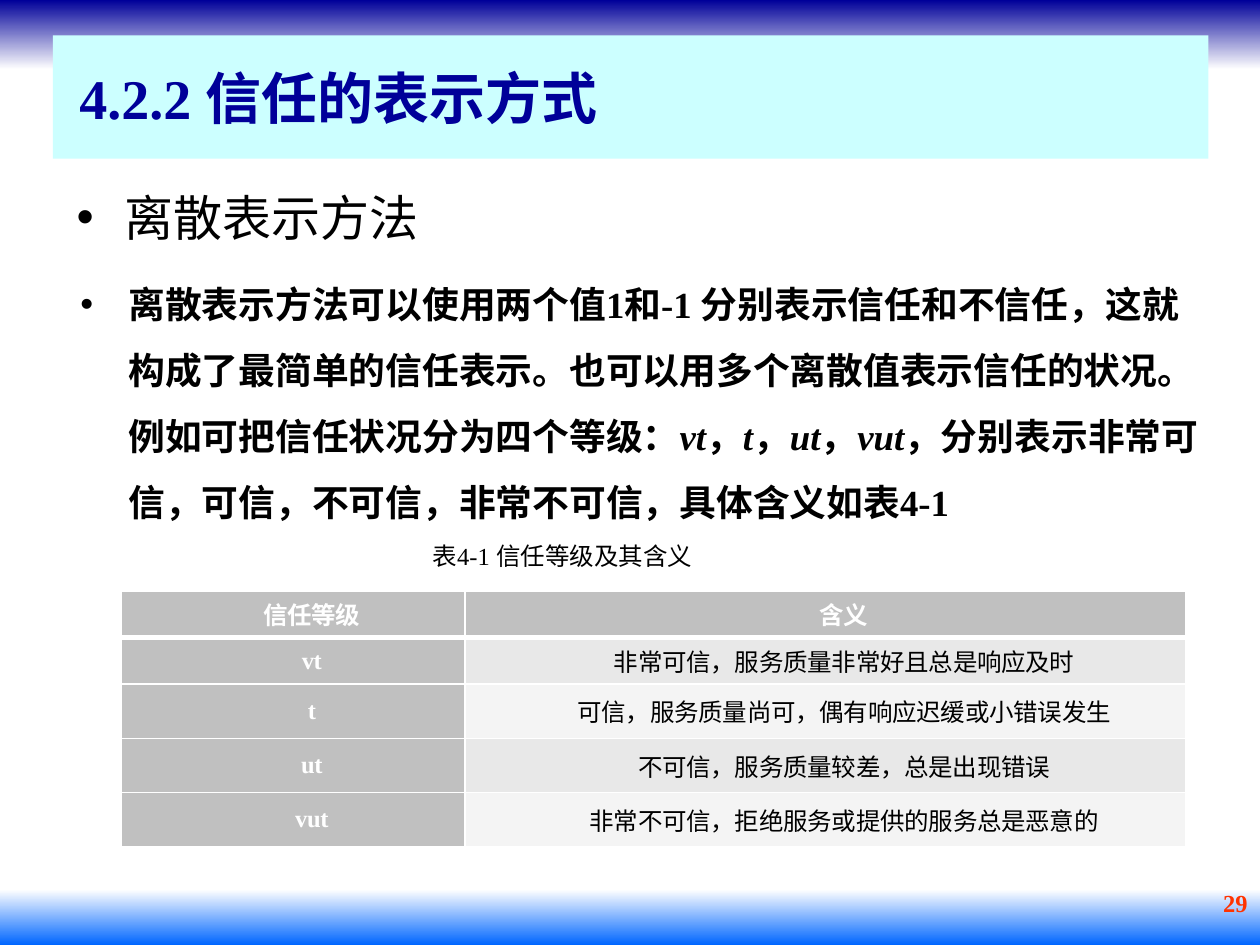
from lxml import etree
from pptx import Presentation
from pptx import util as u
from pptx.dml.color import RGBColor
from pptx.enum import shapes, text
from pptx.oxml import ns

COLORS = {
    "navy": "000099", "blue": "0066FF", "white": "FFFFFF", "black": "000000",
    "cyan": "CCFFFF", "red": "FF3300", "gray": "C0C0C0",
    "odd": "E8E8E8", "even": "F4F4F4",
}
SERIF = "Times New Roman"
LEFT, CENTER, RIGHT = text.PP_ALIGN.LEFT, text.PP_ALIGN.CENTER, text.PP_ALIGN.RIGHT
TOP, MIDDLE = text.MSO_ANCHOR.TOP, text.MSO_ANCHOR.MIDDLE

BANDS = [
    ((0, 0, 10, 0.55), ("navy", "white")),
    ((0, 7.06, 10, 0.44), ("white", "blue")),
]
TITLE = "4.2.2 信任的表示方式"
TITLE_BOX = (0.42, 0.28, 9.17, 0.98)
EXPLANATION = [
    ("离散表示方法可以使用两个值1和-1 分别表示信任和不信任，这就构成了最简单的信任表示。"
     "也可以用多个离散值表示信任的状况。例如可把信任状况分为四个等级：", False),
    ("vt", True), ("，", False), ("t", True), ("，", False),
    ("ut", True), ("，", False), ("vut", True),
    ("，分别表示非常可信，可信，不可信，非常不可信，具体含义如表4-1", False),
]
TEXT_BOXES = [
    {"box": (0.51, 1.39, 8.74, 0.59), "runs": [("离散表示方法", False)],
     "font": {"size": u.Pt(28), "name": "Montserrat", "bold": False}, "color": "black",
     "paragraph": {"line_spacing": 1.1}, "indent": (0.38, -0.38), "bullet": "•"},
    {"box": (7.05, 7, 2.95, 0.5), "runs": [("29", False)],
     "font": {"size": u.Pt(14), "name": SERIF, "bold": True}, "color": "red",
     "paragraph": {"alignment": RIGHT}},
    {"box": (0.42, 2.01, 9.29, 2.22), "runs": EXPLANATION,
     "font": {"size": u.Pt(21), "name": SERIF, "bold": True}, "color": "black",
     "paragraph": {"line_spacing": 1.5, "level": 1}, "indent": (0.5, -0.38), "bullet": "•"},
    {"box": (0.42, 4.24, 7.81, 0.34), "runs": [("表4-1 信任等级及其含义", False)],
     "font": {"size": u.Pt(14), "name": SERIF, "bold": False}, "color": "black",
     "paragraph": {"alignment": CENTER}, "indent": (0, 0.28), "anchor": MIDDLE},
]
TABLE_BOX = (0.96, 4.69, 8.45, 2.05)
COLUMN_WIDTHS = [2.73, 5.72]
ROW_HEIGHTS = [0.37, 0.37, 0.43, 0.43, 0.43]
ROWS = [
    ("信任等级", "含义"),
    ("vt", "非常可信，服务质量非常好且总是响应及时"),
    ("t", "可信，服务质量尚可，偶有响应迟缓或小错误发生"),
    ("ut", "不可信，服务质量较差，总是出现错误"),
    ("vut", "非常不可信，拒绝服务或提供的服务总是恶意的"),
]


def rgb(name):
    return RGBColor.from_string(COLORS[name])


def inches(values):
    return [u.Inches(value) for value in values]


def apply(target, values):
    for name, value in values.items():
        setattr(target, name, value)


def fill_solid(target, color):
    target.fill.solid()
    target.fill.fore_color.rgb = rgb(color)


def write(paragraph, runs, font, color, settings, indent=(0, 0), bullet=None):
    apply(paragraph, settings)
    properties = paragraph._p.get_or_add_pPr()
    properties.set("marL", str(u.Inches(indent[0])))
    properties.set("indent", str(u.Inches(indent[1])))
    if bullet:
        etree.SubElement(properties, ns.qn("a:buFont"), typeface="Arial")
        etree.SubElement(properties, ns.qn("a:buChar"), char=bullet)
    for content, italic in runs:
        run = paragraph.add_run()
        run.text = content
        apply(run.font, {**font, "italic": italic})
        run.font.color.rgb = rgb(color)


def add_band(slide, box, stops):
    band = slide.shapes.add_shape(shapes.MSO_SHAPE.RECTANGLE, *inches(box))
    band.shadow.inherit = False
    band.line.fill.background()
    band.fill.gradient()
    band.fill.gradient_angle = 270
    for position, (stop, color) in enumerate(zip(band.fill.gradient_stops, stops)):
        stop.position = position
        stop.color.rgb = rgb(color)


def place_title(slide):
    title = slide.shapes.title
    apply(title, dict(zip(("left", "top", "width", "height"), inches(TITLE_BOX))))
    fill_solid(title, "cyan")
    apply(title.text_frame, {"vertical_anchor": MIDDLE, "word_wrap": True,
                             "auto_size": text.MSO_AUTO_SIZE.NONE,
                             "margin_left": u.Inches(0.21)})
    write(title.text_frame.paragraphs[0], [(TITLE, False)],
          {"size": u.Pt(32), "name": SERIF, "bold": True}, "navy", {"alignment": LEFT})
    slide.shapes._spTree.append(title._element)


def add_text(slide, item):
    frame = slide.shapes.add_textbox(*inches(item["box"])).text_frame
    apply(frame, {"word_wrap": True, "vertical_anchor": item.get("anchor", TOP)})
    write(frame.paragraphs[0], item["runs"], item["font"], item["color"],
          item["paragraph"], item.get("indent", (0, 0)), item.get("bullet"))


def add_borders(cell, widths):
    properties = cell._tc.get_or_add_tcPr()
    for side, width in widths.items():
        line = etree.SubElement(properties, ns.qn(f"a:ln{side}"), w=str(u.Pt(width)))
        solid = etree.SubElement(line, ns.qn("a:solidFill"))
        etree.SubElement(solid, ns.qn("a:srgbClr"), val=COLORS["white"])


def add_levels_table(slide):
    table = slide.shapes.add_table(len(ROWS), len(COLUMN_WIDTHS), *inches(TABLE_BOX)).table
    for column, width in zip(table.columns, COLUMN_WIDTHS):
        column.width = u.Inches(width)
    for row, height in zip(table.rows, ROW_HEIGHTS):
        row.height = u.Inches(height)
    for row_index, row in enumerate(ROWS):
        for column_index, content in enumerate(row):
            cell = table.cell(row_index, column_index)
            heading = row_index == 0 or column_index == 0
            add_borders(cell, {"L": 1, "R": 1, "T": 3 if row_index == 1 else 1,
                               "B": 3 if row_index == 0 else 1})
            fill_solid(cell, "gray" if heading else "odd" if row_index % 2 else "even")
            apply(cell, {"vertical_anchor": MIDDLE, "margin_top": 0, "margin_bottom": 0,
                         "margin_left": u.Inches(0.08), "margin_right": u.Inches(0.08)})
            paragraph = cell.text_frame.paragraphs[0]
            write(paragraph, [(content, False)],
                  {"size": u.Pt(14), "name": SERIF, "bold": heading},
                  "white" if heading else "black", {"alignment": CENTER}, (0, 0.3))
            paragraph.runs[0]._r.get_or_add_rPr().set("spc", "-20")


def main():
    presentation = Presentation()
    presentation.slide_width, presentation.slide_height = inches((10, 7.5))
    slide = presentation.slides.add_slide(presentation.slide_layouts[5])
    for box, stops in BANDS:
        add_band(slide, box, stops)
    place_title(slide)
    for item in TEXT_BOXES:
        add_text(slide, item)
    add_levels_table(slide)
    presentation.save("out.pptx")


if __name__ == "__main__":
    main()
